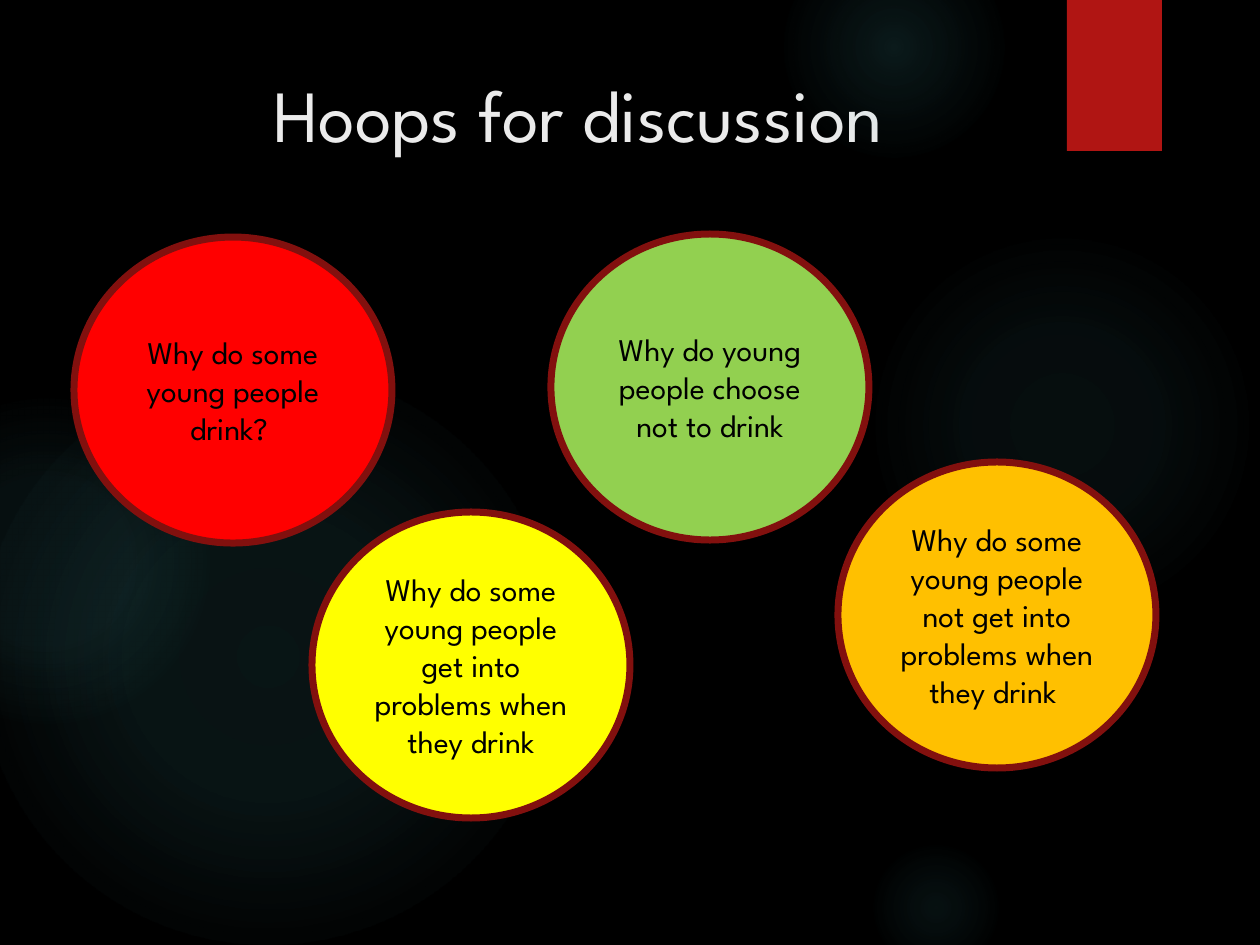
from pptx import Presentation
from pptx.dml.color import RGBColor
from pptx.enum.shapes import MSO_SHAPE
from pptx.enum.text import MSO_ANCHOR, PP_ALIGN
from pptx.oxml import parse_xml
from pptx.oxml.ns import nsdecls, qn
from pptx.util import Emu, Pt

OVAL, RECTANGLE = MSO_SHAPE.OVAL, MSO_SHAPE.RECTANGLE
TOP, MIDDLE = MSO_ANCHOR.TOP, MSO_ANCHOR.MIDDLE
LEFT, CENTER = PP_ALIGN.LEFT, PP_ALIGN.CENTER

THEME = {
    "font": "League Spartan",
    "title_size": 42,
    "hoop_size": 18,
    "hoop_line": 4,
    "background": "000000",
    "title": "EBEBEB",
    "text": "000000",
    "glow": "50B9C1",
    "ribbon": "B01513",
    "outline": "82100E",
    "orange": "FFC000",
    "green": "92D050",
    "yellow": "FFFF00",
    "red": "FF0000",
}


def px(length):
    return Emu(round(length * 914400 / 126))


def write(shape, text, size, color, alignment, anchor):
    frame = shape.text_frame
    frame.text = text
    frame.word_wrap = True
    frame.vertical_anchor = anchor
    paragraph = frame.paragraphs[0]
    paragraph.alignment = alignment
    font_format = {"name": THEME["font"], "size": Pt(THEME[size]), "bold": False}
    for name, value in font_format.items():
        setattr(paragraph.runs[0].font, name, value)
    paragraph.runs[0].font.color.rgb = RGBColor.from_string(THEME[color])


presentation = Presentation()
presentation.slide_width = px(1260)
presentation.slide_height = px(945)
slide = presentation.slides.add_slide(presentation.slide_layouts[5])
slide.background.fill.solid()
slide.background.fill.fore_color.rgb = RGBColor.from_string(THEME["background"])

glows = [
    (868, 231, 388, [(0, 7), (36, 6), (69, 0)]),
    (784, -63, 220, [(0, 14), (36, 7), (73, 0)]),
    (868, 840, 136, [(0, 9), (36, 5), (66, 0)]),
    (-21, 368, 577, [(0, 11), (36, 10), (75, 0)]),
    (-116, 399, 325, [(0, 8), (36, 8), (72, 0)]),
]
for left, top, diameter, stops in glows:
    glow = slide.shapes.add_shape(OVAL, px(left), px(top), px(diameter), px(diameter))
    glow.shadow.inherit = False
    glow.line.fill.background()
    glow.fill.background()
    stop_xml = "".join(
        f'<a:gs pos="{position * 1000}"><a:srgbClr val="{THEME["glow"]}">'
        f'<a:alpha val="{opacity * 1000}"/></a:srgbClr></a:gs>'
        for position, opacity in stops
    )
    gradient = parse_xml(
        f'<a:gradFill {nsdecls("a")} rotWithShape="1"><a:gsLst>{stop_xml}</a:gsLst>'
        '<a:path path="circle"><a:fillToRect l="50000" t="50000" r="50000" b="50000"/>'
        "</a:path></a:gradFill>"
    )
    properties = glow.element.spPr
    properties.replace(properties.find(qn("a:noFill")), gradient)

ribbon = slide.shapes.add_shape(RECTANGLE, px(1067), px(0), px(95), px(151))
ribbon.shadow.inherit = False
ribbon.fill.solid()
ribbon.fill.fore_color.rgb = RGBColor.from_string(THEME["ribbon"])
ribbon.line.fill.background()

title = slide.shapes.title
title_box = {"left": 67, "top": 63, "width": 973, "height": 193}
for name, value in title_box.items():
    setattr(title, name, px(value))
write(title, "Hoops for discussion", "title_size", "title", LEFT, TOP)
title.text_frame.margin_left = px(206)

hoops = [
    (838, 462, "orange", "Why do some young people not get into problems when they drink "),
    (551, 234, "green", "Why do young people choose not to drink"),
    (312, 512, "yellow", "Why do some young people get into problems when they drink"),
    (74, 237, "red", "Why do some young people drink? "),
]
for left, top, color, question in hoops:
    hoop = slide.shapes.add_shape(OVAL, px(left), px(top), px(318), px(306))
    hoop.shadow.inherit = False
    hoop.fill.solid()
    hoop.fill.fore_color.rgb = RGBColor.from_string(THEME[color])
    hoop.line.color.rgb = RGBColor.from_string(THEME["outline"])
    hoop.line.width = Pt(THEME["hoop_line"])
    write(hoop, question, "hoop_size", "text", CENTER, MIDDLE)

presentation.save("out.pptx")
